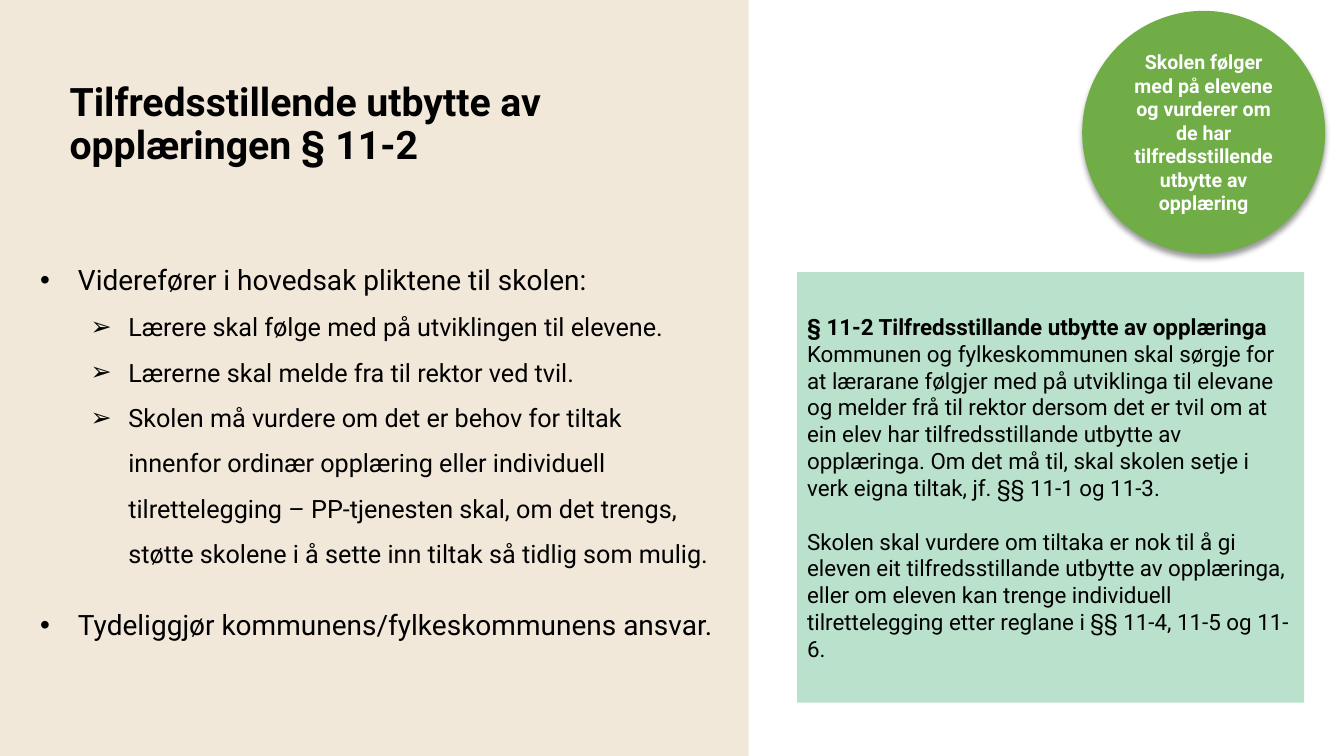
import pptx
import pptx.dml.color
import pptx.enum.shapes
import pptx.enum.text
import pptx.oxml
import pptx.oxml.ns
import pptx.util
from lxml import etree

Cm, Pt = pptx.util.Cm, pptx.util.Pt
SHAPE = pptx.enum.shapes.MSO_SHAPE
ALIGN = pptx.enum.text.PP_ALIGN
MIDDLE = pptx.enum.text.MSO_ANCHOR.MIDDLE
TOP = pptx.enum.text.MSO_ANCHOR.TOP
qn = pptx.oxml.ns.qn

FONT = "Roboto"
SAND, MINT, GREEN = "F2E8DA", "B9E1CC", "70AD47"
BLACK, WHITE = "000000", "FFFFFF"

TITLE = "Tilfredsstillende utbytte av opplæringen § 11-2"
DUTIES = [  # level, text, space before in points
    (0, "Viderefører i hovedsak pliktene til skolen:", 0),
    (1, "Lærere skal følge med på utviklingen til elevene.", 0),
    (1, "Lærerne skal melde fra til rektor ved tvil.", 0),
    (1, "Skolen må vurdere om det er behov for tiltak innenfor ordinær "
        "opplæring eller individuell tilrettelegging – PP-tjenesten skal, om "
        "det trengs, støtte skolene i å sette inn tiltak så tidlig som mulig.", 0),
    (0, "Tydeliggjør kommunens/fylkeskommunens ansvar.", 16),
]
LAW = [  # text, bold, space before in points
    ("§ 11-2 Tilfredsstillande utbytte av opplæringa", True, 0),
    ("Kommunen og fylkeskommunen skal sørgje for at lærarane følgjer med på "
     "utviklinga til elevane og melder frå til rektor dersom det er tvil om "
     "at ein elev har tilfredsstillande utbytte av opplæringa. Om det må til, "
     "skal skolen setje i verk eigna tiltak, jf. §§ 11-1 og 11-3.", False, 0),
    ("Skolen skal vurdere om tiltaka er nok til å gi eleven eit "
     "tilfredsstillande utbytte av opplæringa, eller om eleven kan trenge "
     "individuell tilrettelegging etter reglane i §§ 11-4, 11-5 og 11-6.",
     False, 19),
]
SUMMARY = ("Skolen følger med på elevene og vurderer om de har "
           "tilfredsstillende utbytte av opplæring")
# bullet, text size, left margin in cm
LEVELS = [("•", 20, 0.95), ("➢", 18, 2.22)]
HANGING = Cm(0.95)


def rgb(color):
    return pptx.dml.color.RGBColor.from_string(color)


def set_attributes(obj, values):
    for name, value in values.items():
        setattr(obj, name, value)


def place(sp, left, top, width, height):
    set_attributes(sp, {"left": Cm(left), "top": Cm(top),
                        "width": Cm(width), "height": Cm(height)})


def prepare_text(sp, anchor):
    tf = sp.text_frame
    set_attributes(tf, {"word_wrap": True, "vertical_anchor": anchor,
                        "auto_size": pptx.enum.text.MSO_AUTO_SIZE.NONE})
    return tf


def write(tf, text, size, color=BLACK, bold=False, **layout):
    """Fill the empty first paragraph, or add one, and return it."""
    p = tf.paragraphs[0]
    if p.runs:
        p = tf.add_paragraph()
    set_attributes(p, {"alignment": ALIGN.LEFT, "space_before": Pt(0), **layout})
    r = p.add_run()
    r.text = text
    set_attributes(r.font, {"name": FONT, "size": Pt(size), "bold": bold})
    r.font.color.rgb = rgb(color)
    return p


def add_bullet(p, char, margin):
    pPr = p._p.get_or_add_pPr()
    pPr.set("marL", str(Cm(margin)))
    pPr.set("indent", str(-HANGING))
    etree.SubElement(pPr, qn("a:buFont"), typeface="Arial")
    etree.SubElement(pPr, qn("a:buChar"), char=char)


def add_filled_shape(s, kind, box, color):
    sp = s.shapes.add_shape(kind, 0, 0, 0, 0)
    place(sp, *box)
    sp.shadow.inherit = False
    sp.fill.solid()
    sp.fill.fore_color.rgb = rgb(color)
    sp.line.fill.background()
    return sp


def add_shadow(sp):
    effects = sp.element.spPr.find(qn("a:effectLst"))
    shadow = etree.SubElement(
        effects, qn("a:outerShdw"), blurRad=str(Pt(4)), dist=str(Pt(3)),
        dir="5400000", algn="ctr", rotWithShape="0")
    color = etree.SubElement(shadow, qn("a:srgbClr"), val=BLACK)
    etree.SubElement(color, qn("a:alpha"), val="40000")


def fill_title(sp):
    place(sp, 1.5, 1.32, 15.9, 3.68)
    write(prepare_text(sp, MIDDLE), TITLE, 28, bold=True, line_spacing=0.9)


def fill_duties(sp):
    place(sp, 0.76, 6.07, 17.63, 10.19)
    tf = prepare_text(sp, TOP)
    for level, text, gap in DUTIES:
        char, size, margin = LEVELS[level]
        p = write(tf, text, size, level=level, line_spacing=1.5,
                  space_before=Pt(gap))
        add_bullet(p, char, margin)


def add_law_box(s):
    sp = add_filled_shape(s, SHAPE.RECTANGLE, (20.09, 6.86, 12.78, 10.85), MINT)
    tf = prepare_text(sp, MIDDLE)
    for text, bold, gap in LAW:
        write(tf, text, 16, bold=bold, space_before=Pt(gap))


def add_summary_circle(s):
    sp = add_filled_shape(s, SHAPE.FLOWCHART_CONNECTOR,
                          (27.3, 0.3, 6.07, 6.07), GREEN)
    sp.line.color.rgb = rgb(GREEN)
    sp.line.width = Pt(1.5)
    add_shadow(sp)
    write(prepare_text(sp, MIDDLE), SUMMARY, 14, WHITE, True,
          alignment=ALIGN.CENTER)


def main():
    prs = pptx.Presentation()
    prs.slide_width, prs.slide_height = Cm(33.87), Cm(19.05)
    s = prs.slides.add_slide(prs.slide_layouts[1])
    title, body = s.shapes.title, s.placeholders[1]
    panel = add_filled_shape(s, SHAPE.RECTANGLE, (0, 0, 18.87, 19.05), SAND)
    title.element.addprevious(panel.element)  # behind the text
    fill_title(title)
    fill_duties(body)
    add_law_box(s)
    add_summary_circle(s)
    prs.save("out.pptx")


if __name__ == "__main__":
    main()
